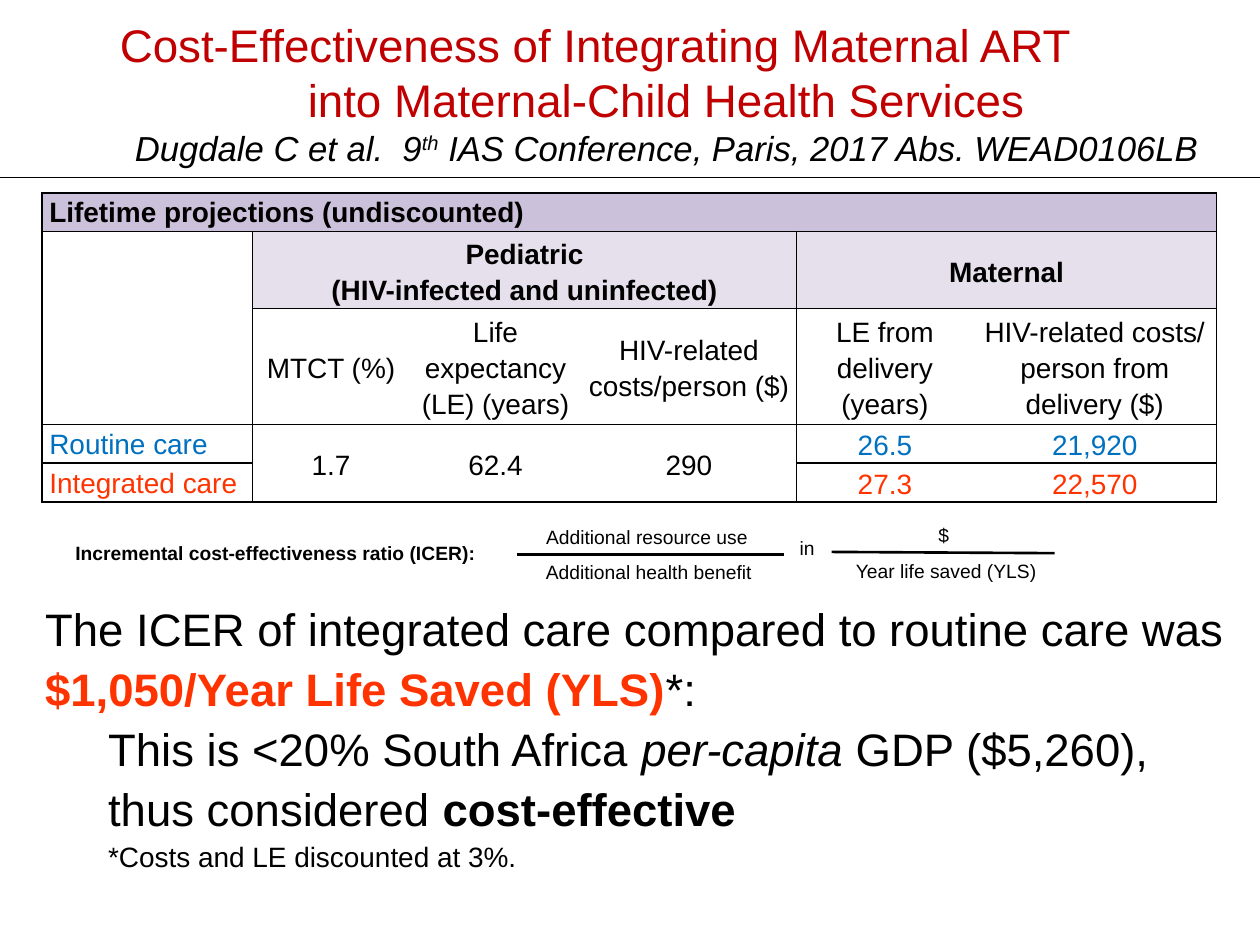
import pptx
import pptx.util
import pptx.dml.color
import pptx.enum.shapes
import pptx.enum.text
import pptx.oxml
import pptx.oxml.ns
import lxml.etree

Pt = pptx.util.Pt
ALIGN = pptx.enum.text.PP_ALIGN
MIDDLE = pptx.enum.text.MSO_ANCHOR.MIDDLE
BLACK, RED, BLUE, ORANGE = "000000", "C00000", "0070C0", "FF3300"
WIDTHS = [120.2, 90, 97.9, 123.2, 100.8, 139]
HEIGHTS = [20.5, 43, 61, 20.5, 20.5]
RULES = (0, 1, 4, 6)
CELLS = [
    (0, 0, 1, 6, "Lifetime projections (undiscounted)", BLACK, "CCC1DA"),
    (1, 0, 2, 1, "", BLACK, None),
    (1, 1, 1, 3, "Pediatric\n(HIV-infected and uninfected)", BLACK, "E6E0EC"),
    (1, 4, 1, 2, "Maternal", BLACK, "E6E0EC"),
    (2, 1, 1, 1, "MTCT (%)", BLACK, None),
    (2, 2, 1, 1, "Life expectancy (LE) (years)", BLACK, None),
    (2, 3, 1, 1, "HIV-related costs/person ($)", BLACK, None),
    (2, 4, 1, 1, "LE from delivery (years)", BLACK, None),
    (2, 5, 1, 1, "HIV-related costs/ person from delivery ($)", BLACK, None),
    (3, 0, 1, 1, "Routine care", BLUE, None),
    (3, 1, 2, 1, "1.7", BLACK, None),
    (3, 2, 2, 1, "62.4", BLACK, None),
    (3, 3, 2, 1, "290", BLACK, None),
    (3, 4, 1, 1, "26.5", BLUE, None),
    (3, 5, 1, 1, "21,920", BLUE, None),
    (4, 0, 1, 1, "Integrated care", ORANGE, None),
    (4, 4, 1, 1, "27.3", ORANGE, None),
    (4, 5, 1, 1, "22,570", ORANGE, None),
]
TERMS = [
    ("Additional resource use", 272.2, 296.6, 195),
    ("Additional health benefit", 276.5, 316.8, 188.6),
    ("$", 455, 295.2, 168.5),
    ("Year life saved (YLS)", 454.3, 316.1, 172.8),
    ("in", 446.4, 303.1, 29.5),
]


def tint(code):
    """Turn a hex string into a colour."""
    return pptx.dml.color.RGBColor.from_string(code)


def style(font, size, color=BLACK, bold=False, slant=False):
    """Set the look of a font."""
    font.name, font.size = "Arial", Pt(size)
    font.bold, font.italic = bold, slant
    font.color.rgb = tint(color)


def add_box(slide, left, top, width, height, fit=True):
    """Add a wrapping text box and return its text frame."""
    frame = slide.shapes.add_textbox(Pt(left), Pt(top), Pt(width), Pt(height)).text_frame
    frame.word_wrap = True
    if fit:
        frame.auto_size = pptx.enum.text.MSO_AUTO_SIZE.SHAPE_TO_FIT_TEXT
    return frame


def add_para(frame, runs, size, align=ALIGN.LEFT, indent=0, space=1.0, **look):
    """Fill the empty first paragraph or a new one, and return it."""
    para = frame.paragraphs[0] if not frame.text else frame.add_paragraph()
    para.alignment, para.line_spacing = align, space
    style(para.font, size, **look)
    if indent:
        para._p.get_or_add_pPr().set("marL", str(Pt(indent)))
    for text in runs:
        para.add_run().text = text
    return para


def add_line(slide, start, end, width):
    """Draw a straight black line without a shadow."""
    line = slide.shapes.add_connector(
        pptx.enum.shapes.MSO_CONNECTOR.STRAIGHT, *map(Pt, start + end))
    line.line.color.rgb, line.line.width = tint(BLACK), Pt(width)
    lxml.etree.SubElement(line._element.spPr, pptx.oxml.ns.qn("a:effectLst"))


def add_edge(cell, side, shown):
    """Draw or clear one edge of a cell."""
    fill = f'<a:solidFill><a:srgbClr val="{BLACK}"/></a:solidFill>' if shown else "<a:noFill/>"
    cell._tc.get_or_add_tcPr().append(pptx.oxml.parse_xml(
        f'<a:ln{side} {pptx.oxml.ns.nsdecls("a")} w="{Pt(1)}">{fill}</a:ln{side}>'))


def add_grid(slide):
    """Build the table of lifetime projections."""
    table = slide.shapes.add_table(
        len(HEIGHTS), len(WIDTHS), Pt(24), Pt(110.2),
        Pt(sum(WIDTHS)), Pt(sum(HEIGHTS))).table
    table.first_row = table.horz_banding = False
    for column, width in zip(table.columns, WIDTHS):
        column.width = Pt(width)
    for row, height in zip(table.rows, HEIGHTS):
        row.height = Pt(height)
    for row, col, tall, wide, text, color, fill in CELLS:
        first = table.cell(row, col)
        if tall * wide > 1:
            first.merge(table.cell(row + tall - 1, col + wide - 1))
        for down in range(tall):
            for over in range(wide):
                cell = table.cell(row + down, col + over)
                head = cell is first or down + over == 0
                cell.margin_left = cell.margin_right = Pt(4.2)
                cell.margin_top = cell.margin_bottom = 0
                add_edge(cell, "L", over == 0 and col in RULES)
                add_edge(cell, "R", (head or over == wide - 1) and col + wide in RULES)
                add_edge(cell, "T", down == 0)
                add_edge(cell, "B", head or down == tall - 1)
                if fill:
                    cell.fill.solid()
                    cell.fill.fore_color.rgb = tint(fill)
                else:
                    cell.fill.background()
                style(cell.text_frame.paragraphs[0].font, 16)
        if col:
            first.vertical_anchor = MIDDLE
        for part in text.split("\n"):
            add_para(first.text_frame, [part] if part else [], 16,
                     ALIGN.CENTER if col else ALIGN.LEFT,
                     space=1.15, color=color, bold=row < 2)


def add_title(slide):
    """Write the title and its citation."""
    frame = add_box(slide, 56.9, 7.9, 648, 90, fit=False)
    frame.vertical_anchor = MIDDLE
    add_para(frame, ["Cost-Effectiveness of Integrating Maternal ART"], 26.1,
             indent=4.5, color=RED)
    add_para(frame, ["into Maternal-Child Health Services"], 26.1, ALIGN.CENTER, color=RED)
    cite = add_para(frame, ["Dugdale C et al.  9", "th",
                            " IAS Conference, Paris, 2017 Abs. WEAD0106LB"],
                    19.8, ALIGN.CENTER, slant=True)
    cite.runs[1]._r.get_or_add_rPr().set("baseline", "30000")


def add_ratio(slide):
    """Set out the cost-effectiveness ratio as two fractions."""
    for text, left, top, width in TERMS:
        add_para(add_box(slide, left, top, width, 20.9), [text], 11, ALIGN.CENTER)
    add_line(slide, (295.2, 316.8), (447.8, 316.8), 1.5)
    add_line(slide, (475.2, 315.4), (602.6, 316.1), 1.5)
    add_para(add_box(slide, 36, 306, 249.1, 20.9),
             ["Incremental cost-effectiveness ratio (ICER):"], 11, bold=True)


def add_result(slide):
    """Write the finding and its footnote."""
    frame = add_box(slide, 18.7, 337, 697, 159.8)
    lead = add_para(frame, ["The ICER of integrated care compared to routine care was ",
                            "$1,050/Year Life Saved (YLS)", "*:"], 26, space=1.1)
    lead.runs[1].font.bold = True
    lead.runs[1].font.color.rgb = tint(ORANGE)
    point = add_para(frame, ["This is <20% South Africa ", "per-capita",
                             " GDP ($5,260), thus considered ", "cost-effective"],
                     26, indent=36, space=1.1)
    point.runs[1].font.italic = True
    point.runs[3].font.bold = True
    add_para(frame, ["*Costs and LE discounted at 3%."], 16, indent=36, space=1.1)


def main():
    """Build the slide and save it."""
    deck = pptx.Presentation()
    deck.slide_width, deck.slide_height = Pt(720), Pt(540)
    slide = deck.slides.add_slide(deck.slide_layouts[6])
    add_title(slide)
    add_line(slide, (0, 101.5), (720, 101.5), 0.75)
    add_grid(slide)
    add_ratio(slide)
    add_result(slide)
    deck.save("out.pptx")


if __name__ == "__main__":
    main()
